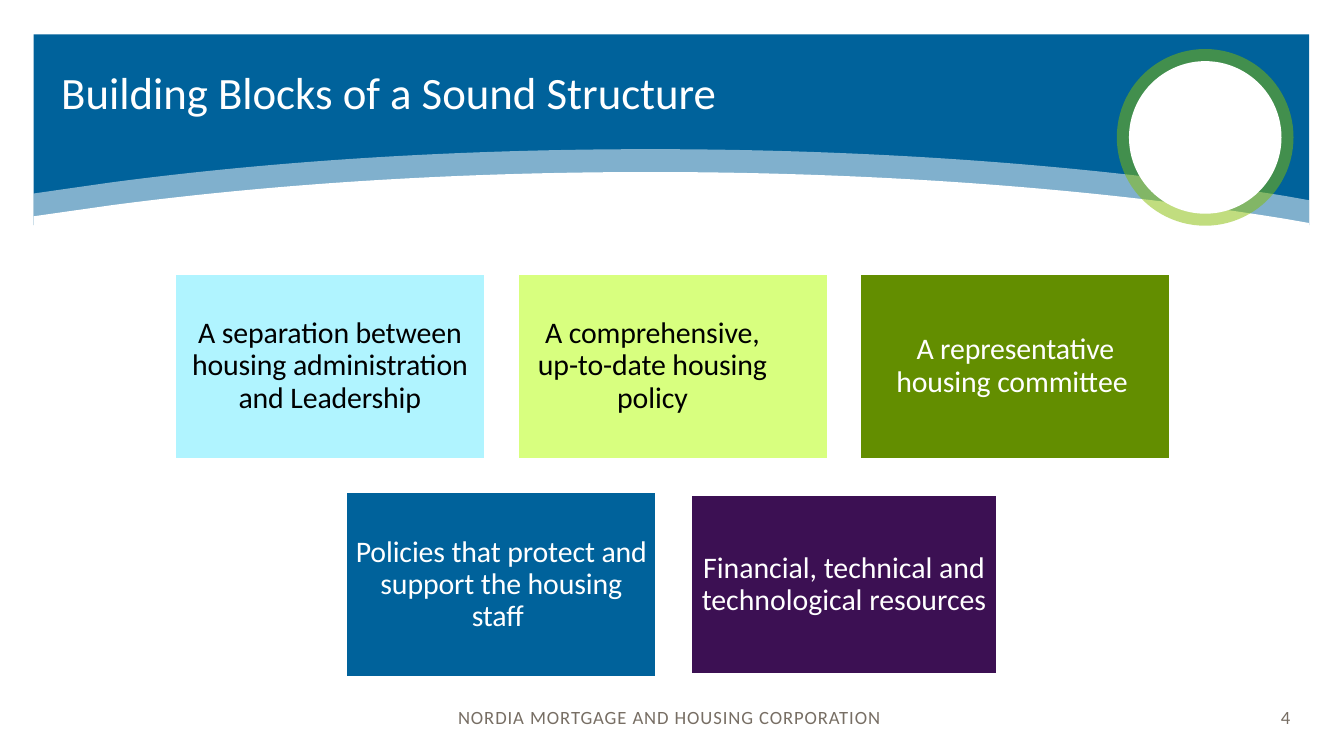
"""Builds the slide on the building blocks of a sound housing structure."""
from lxml.etree import SubElement
from pptx import Presentation
from pptx.dml.color import RGBColor
from pptx.enum.shapes import MSO_SHAPE
from pptx.enum.text import MSO_ANCHOR, MSO_AUTO_SIZE, PP_ALIGN
from pptx.oxml.ns import qn
from pptx.util import Pt

PX = 4572
WHITE, BLACK, BLUE, GREEN, GREY = "FFFFFF", "000000", "00629B", "84BD00", "776E64"
ARCH = [(112, 50), (352, 18), (626, 0), (918, 0), (1268, 0), (1594, 26), (1864, 70)]
ROWS = [
    [
        ("A separation between housing administration and Leadership", "B0F4FF", BLACK, (0, 0), -5),
        ("A comprehensive,\nup-to-date housing policy", "D8FF7F", BLACK, (0, 0), -5),
        ("A representative housing committee ", "638E00", WHITE, (0, 0), -5),
    ],
    [
        ("Policies that protect and support the housing staff ", BLUE, WHITE, (0, 0), -5),
        ("Financial, technical and technological resources ", "3C1053", WHITE, (3, 4), 0),
    ],
]


def color(value):
    """Return the colour for a hex string."""
    return RGBColor.from_string(value)


def paint(shape, fill, opacity=100):
    """Give a shape a flat fill with no line or shadow."""
    shape.shadow.inherit = False
    shape.line.fill.background()
    shape.fill.solid()
    shape.fill.fore_color.rgb = color(fill)
    if opacity < 100:
        tint = shape.element.spPr.find(qn("a:solidFill"))[0]
        SubElement(tint, qn("a:alpha")).set("val", str(opacity * 1000))


def add_block(page, kind, box, fill, opacity=100):
    """Add a filled preset shape in the given box."""
    shape = page.shapes.add_shape(kind, *[length * PX for length in box])
    paint(shape, fill, opacity)
    return shape


def write(shape, text, size, ink, align, margin, spacing=0):
    """Write formatted, vertically centred text and return its paragraphs."""
    frame = shape.text_frame
    frame.word_wrap = True
    frame.auto_size = MSO_AUTO_SIZE.NONE
    frame.vertical_anchor = MSO_ANCHOR.MIDDLE
    frame.margin_left = frame.margin_right = margin * PX
    frame.margin_top = frame.margin_bottom = margin * PX
    frame.text = text
    for para in frame.paragraphs:
        para.alignment = align
        for span in para.runs:
            span.font.name = "Calibri"
            span.font.size = Pt(size)
            span.font.color.rgb = color(ink)
            span.font._element.set("spc", str(spacing))
    return frame.paragraphs


def bend(shape, first, count):
    """Turn line segments, three at a time, into cubic curves."""
    outline = next(shape.element.iter(qn("a:path")))
    segments = outline.findall(qn("a:lnTo"))[first:first + 3 * count]
    for start in range(0, len(segments), 3):
        group = segments[start:start + 3]
        curve = SubElement(outline, qn("a:cubicBezTo"))
        group[0].addprevious(curve)
        for segment in group:
            curve.append(segment[0])
            outline.remove(segment)


def add_swoosh(page, left, top, bottom, opacity):
    """Add a white area with an arched upper edge."""
    outline = [(left + x, top + y) for x, y in [(0, 66), *ARCH, (1898, 76)]]
    outline += [(left + 1898, bottom), (left, bottom)]
    corners = [(x * PX, y * PX) for x, y in outline]
    builder = page.shapes.build_freeform(*corners[0])
    builder.add_line_segments(corners[1:], close=True)
    swoosh = builder.convert_to_shape()
    bend(swoosh, 1, 2)
    paint(swoosh, WHITE, opacity)


def add_ring(page, left, top, size, rim):
    """Add a white disc with a translucent green rim."""
    add_block(page, MSO_SHAPE.OVAL, (left, top, size, size), GREEN, 50)
    inner = size - 2 * rim
    add_block(page, MSO_SHAPE.OVAL, (left + rim, top + rim, inner, inner), WHITE)


def add_header(page, left, top, width, height):
    """Add the banner, its arches, the ring and the title."""
    add_block(page, MSO_SHAPE.RECTANGLE, (left, top, width, height), BLUE)
    add_swoosh(page, left, top + 171, top + 307, 50)
    add_swoosh(page, left, top + 205, top + 307, 100)
    add_ring(page, left + 1612, top + 22, 263, 18)
    title = page.shapes.title
    title.left, title.top = (left + 21) * PX, top * PX
    title.width, title.height = 1572 * PX, 178 * PX
    paras = write(title, "Building Blocks of a Sound Structure", 24, WHITE, PP_ALIGN.LEFT, 20)
    paras[0].line_spacing = Pt(26)
    title.element.getparent().append(title.element)


def add_tiles(page, left, top, width, tile_width=464, tile_height=278, gap=46):
    """Add centred rows of coloured tiles."""
    for row_index, row in enumerate(ROWS):
        row_width = len(row) * (tile_width + gap) - gap
        start = left + (width - row_width) // 2
        for index, (text, fill, ink, (inset_x, inset_y), spacing) in enumerate(row):
            x = start + index * (tile_width + gap) + inset_x
            y = top + row_index * (tile_height + gap + 1) + inset_y
            box = (x, y, tile_width - 2 * inset_x, tile_height - 2 * inset_y)
            tile = add_block(page, MSO_SHAPE.RECTANGLE, box, fill)
            tile.line.color.rgb = color(WHITE)
            tile.line.width = Pt(2)
            paras = write(tile, text, 16, ink, PP_ALIGN.CENTER, 14, spacing)
            for para in paras:
                para.line_spacing = 0.9
            for para in paras[:-1]:
                para._p.get_or_add_pPr().set("marR", str(60 * PX))


def add_footer(page, left, top, width, height):
    """Add the organisation line and the page number."""
    band = add_block(page, MSO_SHAPE.RECTANGLE, (left, top, width, height), WHITE)
    write(band, "NORDIA MORTGAGE AND HOUSING CORPORATION ", 10, GREY, PP_ALIGN.CENTER, 0, 50)
    box = (left + width - 172, top, 112, height)
    number = page.shapes.add_textbox(*[length * PX for length in box])
    write(number, "4", 10, GREY, PP_ALIGN.RIGHT, 20, 50)


def main():
    """Build and save the deck."""
    deck = Presentation()
    deck.slide_width, deck.slide_height = 2000 * PX, 1125 * PX
    page = deck.slides.add_slide(deck.slide_layouts[5])
    add_header(page, 50, 51, 1898, 284)
    add_footer(page, 0, 1010, 2000, 115)
    add_tiles(page, 259, 406, 1484)
    deck.save("out.pptx")


if __name__ == "__main__":
    main()
